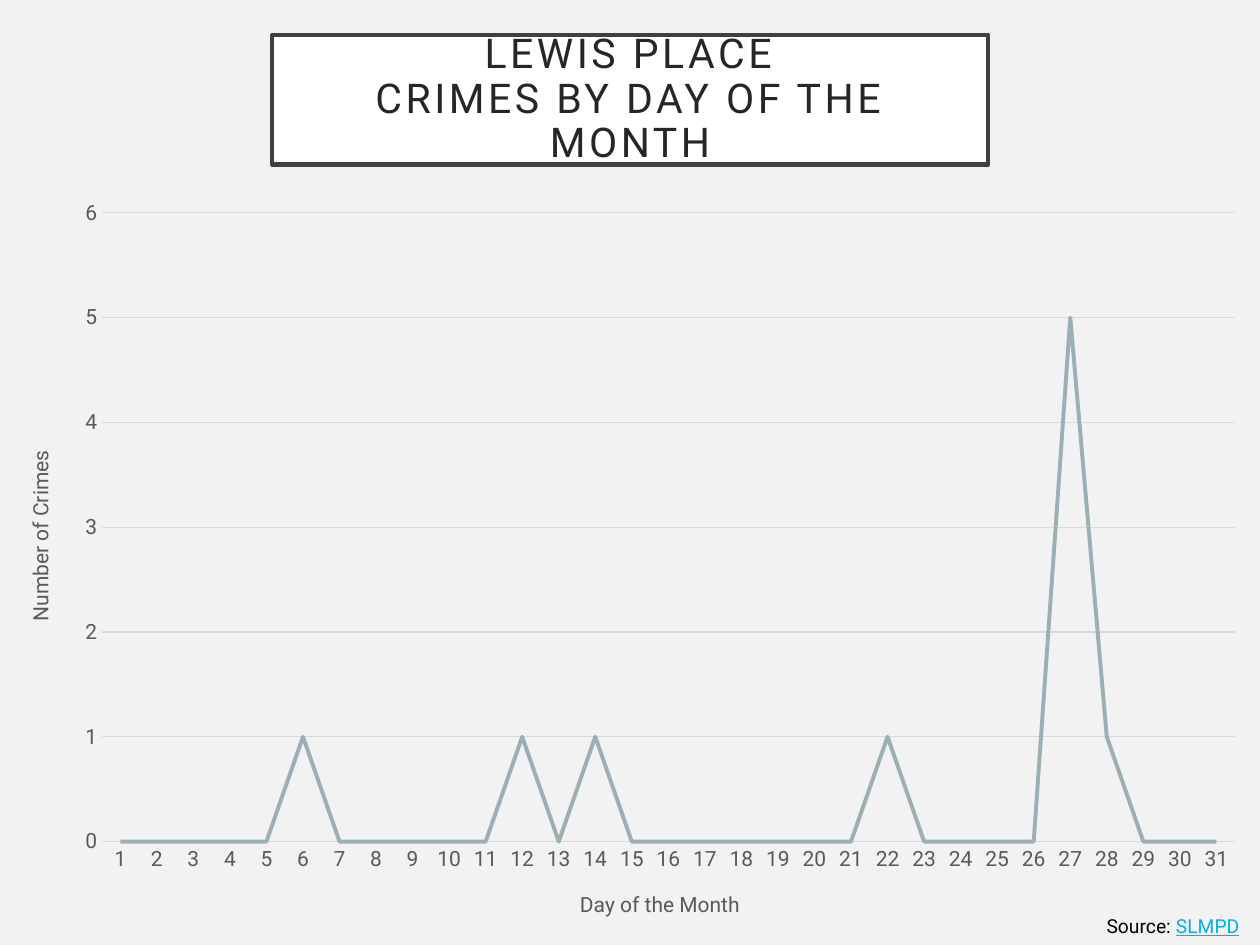
from lxml import etree
from pptx import Presentation
from pptx.chart.data import CategoryChartData
from pptx.dml.color import RGBColor
from pptx.enum.chart import XL_CHART_TYPE, XL_MARKER_STYLE, XL_TICK_MARK
from pptx.enum.text import MSO_ANCHOR, MSO_AUTO_SIZE, PP_ALIGN
from pptx.oxml import parse_xml
from pptx.oxml.ns import nsdecls, qn
from pptx.util import Pt

LINE = XL_CHART_TYPE.LINE
NO_MARKER = XL_MARKER_STYLE.NONE
NO_TICK = XL_TICK_MARK.NONE
CENTER = PP_ALIGN.CENTER
MIDDLE = MSO_ANCHOR.MIDDLE
FONT = "Roboto"


def rgb(color):
    return RGBColor.from_string(color)


def write(paragraph, text, size, color, underline=None, spacing=0):
    """Add text to a paragraph; a line feed becomes a line break."""
    paragraph.alignment = CENTER
    for number, line in enumerate(text.split("\n")):
        if number:
            paragraph.add_line_break()
        run = paragraph.add_run()
        run.text = line
        run.font.name = FONT
        run.font.size = Pt(size)
        run.font.bold = False
        run.font.underline = underline
        run.font.color.rgb = rgb(color)
        if spacing:
            run.font._element.set("spc", str(spacing * 100))


prs = Presentation()
prs.slide_width, prs.slide_height = Pt(720), Pt(540)
slide = prs.slides.add_slide(prs.slide_layouts[5])
slide.background.fill.solid()
slide.background.fill.fore_color.rgb = rgb("F2F2F2")

# Framed title
title = slide.shapes.title
title.left, title.top, title.width, title.height = Pt(155.5), Pt(20), Pt(409), Pt(74)
title.fill.solid()
title.fill.fore_color.rgb = rgb("FFFFFF")
title.line.color.rgb = rgb("404040")
title.line.width = Pt(2.5)
heading = title.text_frame
heading.auto_size = MSO_AUTO_SIZE.NONE
heading.word_wrap = True
heading.vertical_anchor = MIDDLE
heading.margin_left = heading.margin_right = Pt(14.4)
heading.margin_top = heading.margin_bottom = Pt(14.4)
heading.paragraphs[0].line_spacing = 0.9
write(heading.paragraphs[0], "LEWIS PLACE\nCRIMES BY DAY OF THE MONTH", 23.4, "262626", spacing=2)

# Source note
source = slide.shapes.add_textbox(Pt(623.5), Pt(519), Pt(93.6), Pt(21)).text_frame
source.word_wrap = True
write(source.paragraphs[0], "Source: ", 11, "000000")
write(source.paragraphs[0], "SLMPD", 11, "00B0F0", underline=True)

# Crimes per day: every day not listed has none
crimes = {6: 1, 12: 1, 14: 1, 22: 1, 27: 5, 28: 1}
days = range(1, 32)
data = CategoryChartData()
data.categories = [str(day) for day in days]
data.add_series("Series 1", [crimes.get(day, 0) for day in days])
chart = slide.shapes.add_chart(LINE, Pt(0), Pt(106), Pt(720), Pt(434), data).chart
chart.has_title = False
chart.has_legend = False
chart.font.name = FONT
chart.font.size = Pt(12)
chart.font.color.rgb = rgb("000000")

crime_line = chart.plots[0].series[0]
crime_line.smooth = False
crime_line.marker.style = NO_MARKER
crime_line.format.line.color.rgb = rgb("9BAFB5")
crime_line.format.line.width = Pt(2.25)
chart.plots[0].vary_by_categories = False

# Axes
for axis, caption in ((chart.category_axis, "Day of the Month"), (chart.value_axis, "Number of Crimes")):
    axis.major_tick_mark = axis.minor_tick_mark = NO_TICK
    axis.tick_labels.font.name = FONT
    axis.tick_labels.font.size = Pt(12)
    axis.tick_labels.font.color.rgb = rgb("595959")
    write(axis.axis_title.text_frame.paragraphs[0], caption, 12, "595959")

chart.value_axis.minimum_scale = 0
chart.value_axis.maximum_scale = 6
chart.value_axis.major_unit = 1
chart.value_axis.format.line.fill.background()
for rule in (chart.category_axis.format.line, chart.value_axis.major_gridlines.format.line):
    rule.color.rgb = rgb("D9D9D9")
    rule.width = Pt(0.75)

# Transparent chart background
chart_part = chart._chartSpace.find(qn("c:chart"))
chart_part.addnext(parse_xml(
    f'<c:spPr {nsdecls("c", "a")}><a:noFill/><a:ln><a:noFill/></a:ln></c:spPr>'))

# Inner plot area, as fractions of the chart
plot_area = chart_part.find(qn("c:plotArea"))
for old_layout in plot_area.findall(qn("c:layout")):
    plot_area.remove(old_layout)
layout = etree.Element(qn("c:layout"))
manual = etree.SubElement(layout, qn("c:manualLayout"))
for tag, value in (("layoutTarget", "inner"), ("xMode", "edge"), ("yMode", "edge"),
                   ("x", 0.081), ("y", 0.036), ("w", 0.899), ("h", 0.828)):
    etree.SubElement(manual, qn(f"c:{tag}")).set("val", str(value))
plot_area.insert(0, layout)

prs.save("out.pptx")
